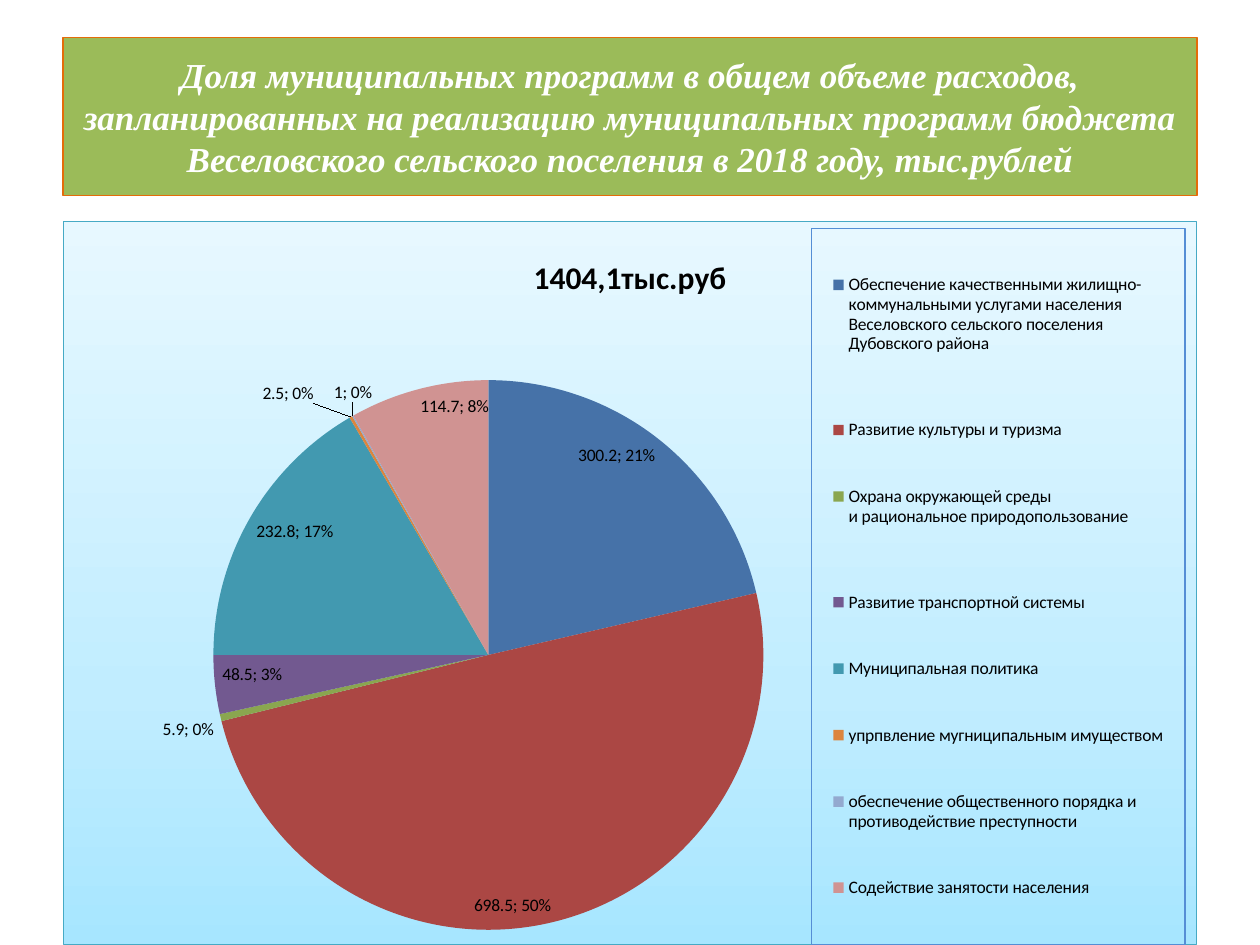
from lxml import etree
from pptx import Presentation
from pptx.chart.data import CategoryChartData
from pptx.dml.color import RGBColor
from pptx.enum import chart as kinds, shapes, text
from pptx.oxml import parse_xml
from pptx.oxml.ns import nsdecls, qn
from pptx.util import Inches, Pt

HEADING = ("Доля муниципальных программ в общем объеме расходов, запланированных на "
           "реализацию муниципальных программ бюджета Веселовского сельского поселения "
           "в 2018 году, тыс.рублей")
TOTAL = "1404,1тыс.руб"
INSIDE, OUTSIDE = "inEnd", "outEnd"
PROGRAMS = [
    ("Обеспечение качественными жилищно-\nкоммунальными услугами населения \n"
     "Веселовского сельского поселения\nДубовского района\n",
     300.2, RGBColor(0x46, 0x72, 0xA8), INSIDE, None),
    ("Развитие культуры и туризма", 698.5, RGBColor(0xAB, 0x47, 0x44), INSIDE, None),
    ("Охрана окружающей среды \nи рациональное природопользование\n",
     5.9, RGBColor(0x8A, 0xA6, 0x4F), OUTSIDE, None),
    ("Развитие транспортной системы", 48.5, RGBColor(0x72, 0x59, 0x90), INSIDE, None),
    ("Муниципальная политика", 232.8, RGBColor(0x42, 0x99, 0xB0), INSIDE, None),
    ("упрпвление мугниципальным имуществом",
     2.5, RGBColor(0xDC, 0x85, 0x3E), OUTSIDE, (-0.03, -0.01)),
    ("обеспечение общественного порядка и противодействие преступности",
     1, RGBColor(0x93, 0xA9, 0xCF), OUTSIDE, (0.02, -0.01)),
    ("Содействие занятости населения", 114.7, RGBColor(0xD0, 0x93, 0x92), INSIDE, None),
]
GREEN = RGBColor(0x9B, 0xBB, 0x59)
ORANGE = RGBColor(0xE4, 0x6C, 0x0A)
WHITE = RGBColor(0xFF, 0xFF, 0xFF)
BLACK = RGBColor(0, 0, 0)
TEAL = RGBColor(0x46, 0xAA, 0xC5)
BLUE = RGBColor(0x55, 0x8E, 0xD5)
SKY = [(0, RGBColor(0xA7, 0xE6, 0xFF)), (35, RGBColor(0xC1, 0xED, 0xFF)),
       (100, RGBColor(0xE7, 0xF8, 0xFF))]


def set_font(font, color, **values):
    for name, value in values.items():
        setattr(font, name, value)
    font.color.rgb = color


def layout(x, y, w=None, h=None, inner=False, offset=False):
    node = parse_xml(f"<c:layout {nsdecls('c')}><c:manualLayout/></c:layout>")
    mode = "factor" if offset else "edge"
    items = [("layoutTarget", "inner")] if inner else []
    items += [] if offset else [("xMode", mode), ("yMode", mode)]
    items += [(name, value) for name, value in zip("xywh", (x, y, w, h)) if value is not None]
    for name, value in items:
        etree.SubElement(node[0], qn(f"c:{name}")).set("val", str(value))
    return node


def place(parent, index, node):
    for old in parent.findall(qn("c:layout")):
        parent.remove(old)
    parent.insert(index, node)


def frame(color, fill="<a:noFill/>"):
    return parse_xml(f'<c:spPr {nsdecls("c", "a")}>{fill}<a:ln w="9525"><a:solidFill>'
                     f'<a:srgbClr val="{color}"/></a:solidFill></a:ln></c:spPr>')


def label_flags(position):
    place_tag = f'<c:dLblPos val="{position}"/>'
    flags = {"LegendKey": 0, "Val": 1, "CatName": 0, "SerName": 0, "Percent": 1, "BubbleSize": 0}
    shown = "".join(f'<c:show{name} val="{value}"/>' for name, value in flags.items())
    return place_tag + shown + "<c:separator>; </c:separator>"


def add_labels(series):
    labels = parse_xml(f"<c:dLbls {nsdecls('c')}>{label_flags(INSIDE)}"
                       '<c:showLeaderLines val="1"/></c:dLbls>')
    for index, (_, _, _, position, shift) in enumerate(PROGRAMS):
        label = parse_xml(f'<c:dLbl {nsdecls("c")}><c:idx val="{index}"/>'
                          f"{label_flags(position)}</c:dLbl>")
        if shift:
            label.insert(1, layout(*shift, offset=True))
        labels.insert(index, label)
    series.find(qn("c:cat")).addprevious(labels)


def add_heading(page):
    box = page.shapes.add_shape(shapes.MSO_SHAPE.RECTANGLE,
                                Inches(0.5), Inches(0.3), Inches(9), Inches(1.25))
    box.shadow.inherit = False
    box.fill.solid()
    box.fill.fore_color.rgb = GREEN
    box.line.color.rgb = ORANGE
    box.line.width = Pt(0.75)
    box.text_frame.word_wrap = True
    box.text_frame.vertical_anchor = text.MSO_ANCHOR.MIDDLE
    para = box.text_frame.paragraphs[0]
    para.alignment = text.PP_ALIGN.CENTER
    span = para.add_run()
    span.text = HEADING
    set_font(span.font, WHITE, name="Times New Roman", size=Pt(20), bold=True, italic=True)


def add_pie(page):
    data = CategoryChartData()
    data.categories = [program[0] for program in PROGRAMS]
    data.add_series("Series 1", [program[1] for program in PROGRAMS])
    chart = page.shapes.add_chart(kinds.XL_CHART_TYPE.PIE, Inches(0.5), Inches(1.75),
                                  Inches(9), Inches(5.75), data).chart
    set_font(chart.font, BLACK, name="Calibri", size=Pt(10))
    plot = chart.plots[0]
    plot.vary_by_categories = True
    for index, program in enumerate(PROGRAMS):
        fill = plot.series[0].points[index].format.fill
        fill.solid()
        fill.fore_color.rgb = program[2]
    add_labels(plot.series[0]._element)

    chart.has_title = True
    title = chart.chart_title
    title.text_frame.text = TOTAL
    set_font(title.text_frame.paragraphs[0].runs[0].font, BLACK,
             name="Calibri", size=Pt(18), bold=True)
    place(title._element, 1, layout(0.41, 0.04))

    chart.has_legend = True
    legend = chart.legend
    legend.position = kinds.XL_LEGEND_POSITION.RIGHT
    legend.include_in_layout = False
    set_font(legend.font, BLACK, name="Calibri", size=Pt(10))
    place(legend._element, 1, layout(0.66, 0.01, 0.33, 0.99))
    legend._element.find(qn("c:overlay")).addnext(frame(BLUE))

    root = chart._chartSpace
    body = root.find(qn("c:chart"))
    place(body.find(qn("c:plotArea")), 0, layout(0.13, 0.22, 0.49, 0.76, inner=True))
    stops = "".join(f'<a:gs pos="{at * 1000}"><a:srgbClr val="{color}"/></a:gs>'
                    for at, color in SKY)
    body.addnext(frame(TEAL, f'<a:gradFill><a:gsLst>{stops}</a:gsLst>'
                             '<a:lin ang="16200000" scaled="1"/></a:gradFill>'))


def main():
    deck = Presentation()
    deck.slide_width, deck.slide_height = Inches(10), Inches(7.5)
    page = deck.slides.add_slide(deck.slide_layouts[6])
    add_heading(page)
    add_pie(page)
    deck.save("out.pptx")


if __name__ == "__main__":
    main()
